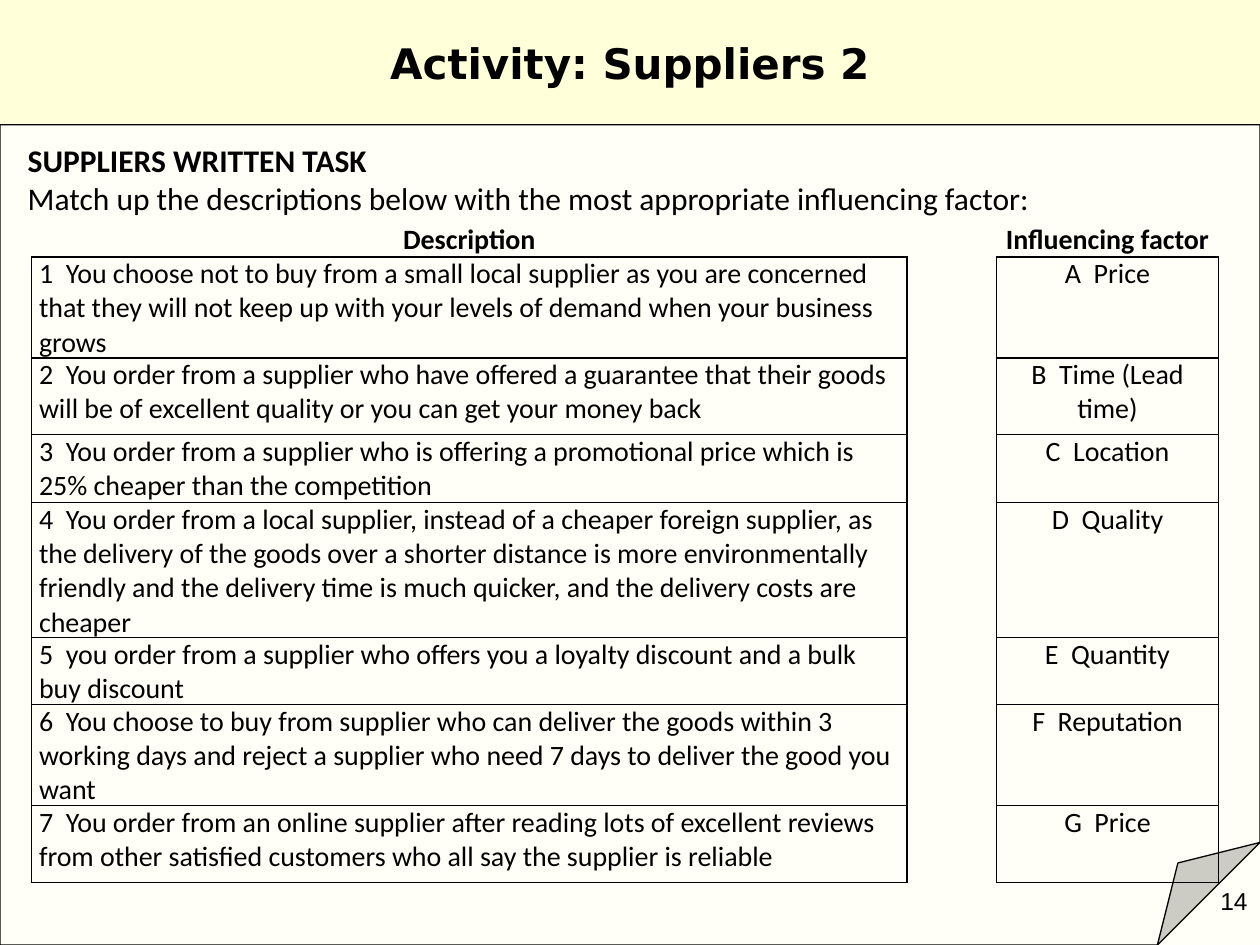
from lxml import etree
from pptx import Presentation
from pptx.dml.color import RGBColor
from pptx.enum import shapes, text
from pptx.oxml.ns import qn
from pptx.util import Inches, Pt

BLACK, CREAM, IVORY = "000000", "FFFFD9", "FFFFF7"
COLUMN_WIDTHS = [6.95, 0.71, 1.76]
HEADINGS = ("Description", "Influencing factor")
# Row height, description, influencing factor
TASKS = [
    (0.8, "1  You choose not to buy from a small local supplier as you are concerned that they "
     "will not keep up with your levels of demand when your business grows", "A  Price"),
    (0.61, "2  You order from a supplier who have offered a guarantee that their goods will be of "
     "excellent quality or you can get your money back", "B  Time (Lead time)"),
    (0.54, "3  You order from a supplier who is offering a promotional price which is 25% cheaper "
     "than the competition", "C  Location"),
    (1.07, "4  You order from a local supplier, instead of a cheaper foreign supplier, as the "
     "delivery of the goods over a shorter distance is more environmentally friendly and the "
     "delivery time is much quicker, and the delivery costs are cheaper", "D  Quality"),
    (0.53, "5  you order from a supplier who offers you a loyalty discount and a bulk buy discount",
     "E  Quantity"),
    (0.8, "6  You choose to buy from supplier who can deliver the goods within 3 working days and "
     "reject a supplier who need 7 days to deliver the good you want", "F  Reputation"),
    (0.61, "7  You order from an online supplier after reading lots of excellent reviews from "
     "other satisfied customers who all say the supplier is reliable", "G  Price"),
]


def color(value):
    return RGBColor.from_string(value)


def style(para, font, size, bold=False, align=text.PP_ALIGN.LEFT):
    para.alignment = align
    para.font.size = Pt(size)
    for span in para.runs:
        span.font.name = font
        span.font.size = Pt(size)
        span.font.bold = bold
        span.font.color.rgb = color(BLACK)


def add_panel(page, kind, place, fill, line=None):
    panel = page.shapes.add_shape(kind, *map(Inches, place))
    panel.shadow.inherit = False
    panel.fill.solid()
    panel.fill.fore_color.rgb = color(fill)
    if line:
        panel.line.color.rgb = color(line)
        panel.line.width = Pt(0.75)
    else:
        panel.line.fill.background()
    return panel


def add_number(page):
    box = page.shapes.add_textbox(*map(Inches, (7.67, 6.98, 2.33, 0.52)))
    box.text_frame.word_wrap = True
    box.text_frame.text = "14"
    style(box.text_frame.paragraphs[0], "Arial", 14, align=text.PP_ALIGN.RIGHT)


def add_title(page):
    band = add_panel(page, shapes.MSO_SHAPE.RECTANGLE, (0, 0, 10, 0.99), CREAM)
    band.text_frame.text = "Activity: Suppliers 2"
    band.text_frame.vertical_anchor = text.MSO_ANCHOR.MIDDLE
    style(band.text_frame.paragraphs[0], "DejaVu Sans", 24, True, text.PP_ALIGN.CENTER)


def add_instructions(page):
    sheet = add_panel(page, shapes.MSO_SHAPE.FOLDED_CORNER, (0, 0.99, 10, 6.51), IVORY, BLACK)
    # The library lists no adjustment for this shape, so the fold size is set in XML
    guides = next(sheet.element.iter(qn("a:avLst")))
    etree.SubElement(guides, qn("a:gd"), name="adj", fmla="val 12500")
    frame = sheet.text_frame
    frame.vertical_anchor = text.MSO_ANCHOR.TOP
    frame.margin_left = frame.margin_right = Inches(0.22)
    frame.margin_top = frame.margin_bottom = Inches(0.13)
    frame.text = ("SUPPLIERS WRITTEN TASK\n"
                  "Match up the descriptions below with the most appropriate influencing factor:")
    for para, bold in zip(frame.paragraphs, (True, False)):
        style(para, "Calibri", 18, bold)


def set_borders(cell, visible):
    properties = cell._tc.get_or_add_tcPr()
    for side in "LRTB":
        line = etree.SubElement(properties, qn(f"a:ln{side}"), w=str(Pt(1)))
        if side in visible:
            fill = etree.SubElement(line, qn("a:solidFill"))
            etree.SubElement(fill, qn("a:srgbClr"), val=BLACK)
        else:
            etree.SubElement(line, qn("a:noFill"))


def fill_cell(cell, words, bold, align, borders):
    cell.margin_left = cell.margin_right = Inches(0.06)
    cell.margin_top = cell.margin_bottom = 0
    cell.text_frame.text = words
    style(cell.text_frame.paragraphs[0], "Calibri", 16, bold, align)
    set_borders(cell, borders)
    cell.fill.background()


def add_matching_table(page):
    rows = [(0.27, *HEADINGS), *TASKS]
    place = (0.25, 1.77, sum(COLUMN_WIDTHS), sum(row[0] for row in rows))
    table = page.shapes.add_table(len(rows), 3, *map(Inches, place)).table
    table.first_row = table.horz_banding = False
    for column, width in zip(table.columns, COLUMN_WIDTHS):
        column.width = Inches(width)
    center, left = text.PP_ALIGN.CENTER, text.PP_ALIGN.LEFT
    for index, (height, description, factor) in enumerate(rows):
        heading = index == 0
        table.rows[index].height = Inches(height)
        outline, gap = ("B", "") if heading else ("LRTB", "LR")
        fill_cell(table.cell(index, 0), description, heading, center if heading else left, outline)
        fill_cell(table.cell(index, 1), "", False, left, gap)
        fill_cell(table.cell(index, 2), factor, heading, center, outline)


def main():
    deck = Presentation()
    deck.slide_width, deck.slide_height = Inches(10), Inches(7.5)
    page = deck.slides.add_slide(deck.slide_layouts[6])
    page.background.fill.solid()
    page.background.fill.fore_color.rgb = color(IVORY)

    # The page number lies behind the sheet and shows at its folded corner
    add_number(page)
    add_title(page)
    add_instructions(page)
    add_matching_table(page)
    deck.save("out.pptx")


if __name__ == "__main__":
    main()
